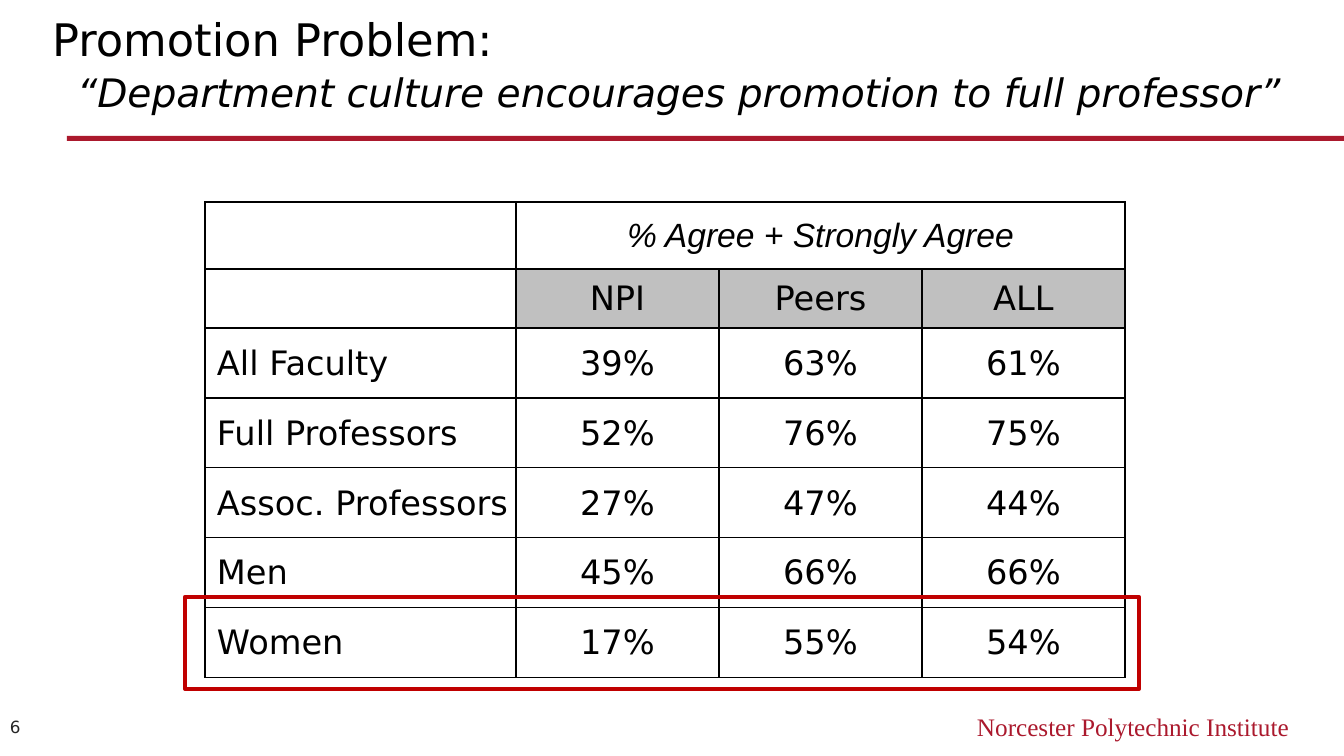
from lxml.etree import SubElement
from pptx import Presentation
from pptx.dml.color import RGBColor
from pptx.enum.shapes import MSO_SHAPE as SHAPE
from pptx.enum.text import MSO_ANCHOR as ANCHOR, MSO_AUTO_SIZE as AUTO_SIZE, PP_ALIGN as ALIGN
from pptx.oxml.ns import qn
from pptx.util import Pt

HEADING = "Promotion Problem:"
QUOTE = "“Department culture encourages promotion to full professor”"
INSTITUTE = "Norcester Polytechnic Institute"
PAGE = "6"
SURVEY = [
    ("", "% Agree + Strongly Agree", "", ""),
    ("", "NPI", "Peers", "ALL"),
    ("All Faculty", "39%", "63%", "61%"),
    ("Full Professors", "52%", "76%", "75%"),
    ("Assoc. Professors", "27%", "47%", "44%"),
    ("Men", "45%", "66%", "66%"),
    ("Women", "17%", "55%", "54%"),
]
COLUMNS = [311, 203, 203, 203]
ROWS = [67, 59] + [70] * 5
TABLE_LEFT, TABLE_TOP = 205, 202
SANS, SERIF = "DejaVu Sans", "Times New Roman"
BLACK, GREY, CRIMSON, RED = "000000", "C0C0C0", "AB192D", "C00000"


def px(length):
    return round(length * 914400 / 100.8)


def color(value):
    return RGBColor.from_string(value)


def style(paragraph, size, font=SANS, ink=BLACK, italic=False, align=ALIGN.LEFT):
    paragraph.alignment = align
    for run in paragraph.runs:
        run.font.size = Pt(size)
        run.font.name = font
        run.font.italic = italic
        run.font.color.rgb = color(ink)


def add_label(text, box, anchor, **look):
    frame = slide.shapes.add_textbox(*map(px, box)).text_frame
    frame.word_wrap = True
    frame.vertical_anchor = anchor
    frame.text = text
    style(frame.paragraphs[0], **look)


def add_box(*box):
    shape = slide.shapes.add_shape(SHAPE.RECTANGLE, *map(px, box))
    shape.shadow.inherit = False
    return shape


def add_borders(cell):
    properties = cell._tc.get_or_add_tcPr()
    for side in ("a:lnL", "a:lnR", "a:lnT", "a:lnB"):
        line = SubElement(properties, qn(side), w=str(Pt(1)))
        fill = SubElement(line, qn("a:solidFill"))
        SubElement(fill, qn("a:srgbClr"), val=BLACK)


deck = Presentation()
deck.slide_width, deck.slide_height = px(1344), px(756)
slide = deck.slides.add_slide(deck.slide_layouts[5])

rule = add_box(67, 136, 1277, 5)
rule.fill.solid()
rule.fill.fore_color.rgb = color(CRIMSON)
rule.line.fill.background()

add_label(INSTITUTE, (806, 706, 493, 40), ANCHOR.TOP,
          size=18, font=SERIF, ink=CRIMSON, align=ALIGN.RIGHT)
add_label(PAGE, (0, 705, 67, 43), ANCHOR.MIDDLE, size=12, ink="262626")

title = slide.shapes.title
title.left, title.top, title.width, title.height = map(px, (42, 7, 1285, 112))
title_frame = title.text_frame
title_frame.text = f"{HEADING}\n{QUOTE}"
title_frame.word_wrap = True
title_frame.auto_size = AUTO_SIZE.NONE
title_frame.vertical_anchor = ANCHOR.TOP
heading, quote = title_frame.paragraphs
style(heading, 32)
style(quote, 28, italic=True)
quote.space_before = Pt(2)
quote._p.get_or_add_pPr().set("marL", str(px(25)))

survey = slide.shapes.add_table(
    len(ROWS), len(COLUMNS),
    *map(px, (TABLE_LEFT, TABLE_TOP, sum(COLUMNS), sum(ROWS)))).table
survey.first_row = survey.horz_banding = False
for column, width in zip(survey.columns, COLUMNS):
    column.width = px(width)
for row, height in zip(survey.rows, ROWS):
    row.height = px(height)

for r, values in enumerate(SURVEY):
    for c, value in enumerate(values):
        cell = survey.cell(r, c)
        cell.text = value
        cell.vertical_anchor = ANCHOR.MIDDLE
        cell.margin_left = px(1 if c else 12)
        cell.margin_right = cell.margin_top = px(1)
        cell.margin_bottom = 0
        add_borders(cell)
        if r == 1 and c:
            cell.fill.solid()
            cell.fill.fore_color.rgb = color(GREY)
        else:
            cell.fill.background()
        style(cell.text_frame.paragraphs[0], 24, font=SANS if r else "Arial",
              italic=r == 0, align=ALIGN.CENTER if c else ALIGN.LEFT)
survey.cell(0, 1).merge(survey.cell(0, 3))

highlight = add_box(185, 597, 954, 92)
highlight.fill.background()
highlight.line.color.rgb = color(RED)
highlight.line.width = Pt(3)

deck.save("out.pptx")
